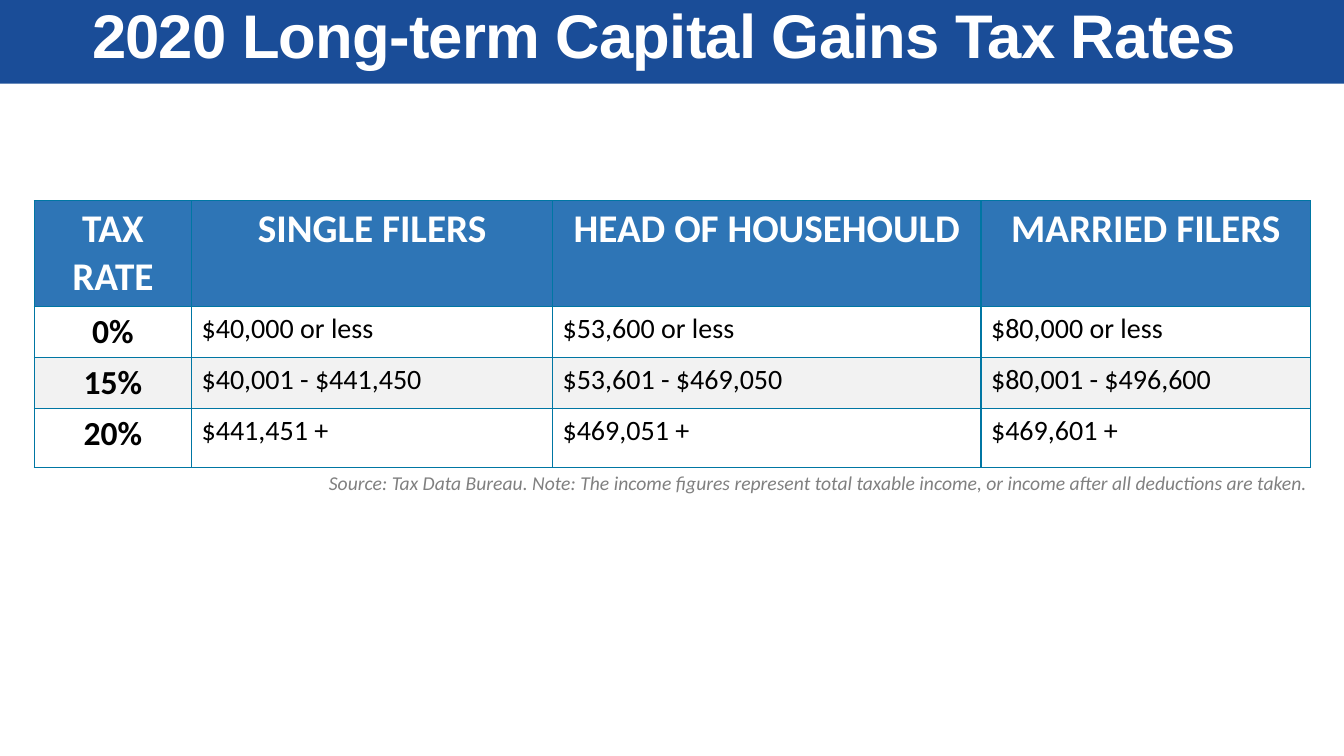
from pptx import Presentation
from pptx.dml.color import RGBColor
from pptx.enum.text import MSO_ANCHOR, PP_ALIGN
from pptx.oxml import parse_xml
from pptx.oxml.ns import nsdecls
from pptx.util import Inches, Pt

TITLE = "2020 Long-term Capital Gains Tax Rates "
RATES = [
    ("TAX RATE", "SINGLE FILERS", "HEAD OF HOUSEHOULD", "MARRIED FILERS"),
    ("0%", "$40,000 or less", "$53,600 or less", "$80,000 or less"),
    ("15%", "$40,001 - $441,450", "$53,601 - $469,050", "$80,001 - $496,600"),
    ("20%", "$441,451 +", "$469,051 +", "$469,601 +"),
]
SOURCE = ("Source: Tax Data Bureau. Note: The income figures represent total "
          "taxable income, or income after all deductions are taken.")

COLUMN_WIDTHS = (1.56, 3.58, 4.25, 3.27)
ROW_HEIGHTS = (1.04, 0.5, 0.5, 0.58)
COLORS = {
    "banner": "1A4D98", "header": "2E75B6", "band": "F2F2F2",
    "border": "0076A3", "white": "FFFFFF", "black": "000000", "note": "808080",
}


def rgb(name):
    return RGBColor.from_string(COLORS[name])


def format_text(paragraph, size, color, font="Calibri", bold=False,
                italic=False, align=PP_ALIGN.LEFT):
    paragraph.alignment = align
    paragraph.font.name = font
    paragraph.font.size = Pt(size)
    paragraph.font.bold = bold
    paragraph.font.italic = italic
    paragraph.font.color.rgb = rgb(color)


def add_borders(cell):
    properties = cell._tc.get_or_add_tcPr()
    for index, side in enumerate(("lnL", "lnR", "lnT", "lnB")):
        properties.insert(index, parse_xml(
            f'<a:{side} {nsdecls("a")} w="{Pt(1)}"><a:solidFill>'
            f'<a:srgbClr val="{COLORS["border"]}"/></a:solidFill></a:{side}>'))


def add_banner_title(slide):
    title = slide.shapes.title
    title.left, title.top = 0, 0
    title.width, title.height = Inches(13.33), Inches(0.83)
    title.fill.solid()
    title.fill.fore_color.rgb = rgb("banner")
    title.text_frame.text = TITLE
    title.text_frame.vertical_anchor = MSO_ANCHOR.MIDDLE
    title.text_frame.margin_bottom = Inches(0.11)
    paragraph = title.text_frame.paragraphs[0]
    format_text(paragraph, 44, "white", "Arial", bold=True, align=PP_ALIGN.CENTER)
    paragraph.line_spacing = 0.9
    paragraph.runs[0].font._element.set("spc", "-60")


def add_rate_table(slide):
    table = slide.shapes.add_table(
        len(RATES), len(COLUMN_WIDTHS), Inches(0.34), Inches(1.99),
        Inches(sum(COLUMN_WIDTHS)), Inches(sum(ROW_HEIGHTS))).table
    for column, width in zip(table.columns, COLUMN_WIDTHS):
        column.width = Inches(width)
    for row, height in zip(table.rows, ROW_HEIGHTS):
        row.height = Inches(height)

    for r, values in enumerate(RATES):
        fill = "header" if r == 0 else "band" if r == 2 else "white"
        for c, value in enumerate(values):
            cell = table.cell(r, c)
            cell.text = value
            cell.fill.solid()
            cell.fill.fore_color.rgb = rgb(fill)
            add_borders(cell)
            heading = r == 0 or c == 0
            format_text(
                cell.text_frame.paragraphs[0],
                size=28 if r == 0 else 24 if c == 0 else 20,
                color="white" if r == 0 else "black", bold=heading,
                align=PP_ALIGN.CENTER if heading else PP_ALIGN.LEFT)


def add_source_note(slide):
    note = slide.shapes.add_textbox(
        Inches(2.16), Inches(4.62), Inches(10.91), Inches(0.34)).text_frame
    note.word_wrap = True
    note.text = SOURCE
    format_text(note.paragraphs[0], 14, "note", italic=True, align=PP_ALIGN.RIGHT)


def main():
    presentation = Presentation()
    presentation.slide_width = Inches(13.33)
    presentation.slide_height = Inches(7.5)
    slide = presentation.slides.add_slide(presentation.slide_layouts[5])
    add_banner_title(slide)
    add_rate_table(slide)
    add_source_note(slide)
    presentation.save("out.pptx")


if __name__ == "__main__":
    main()
